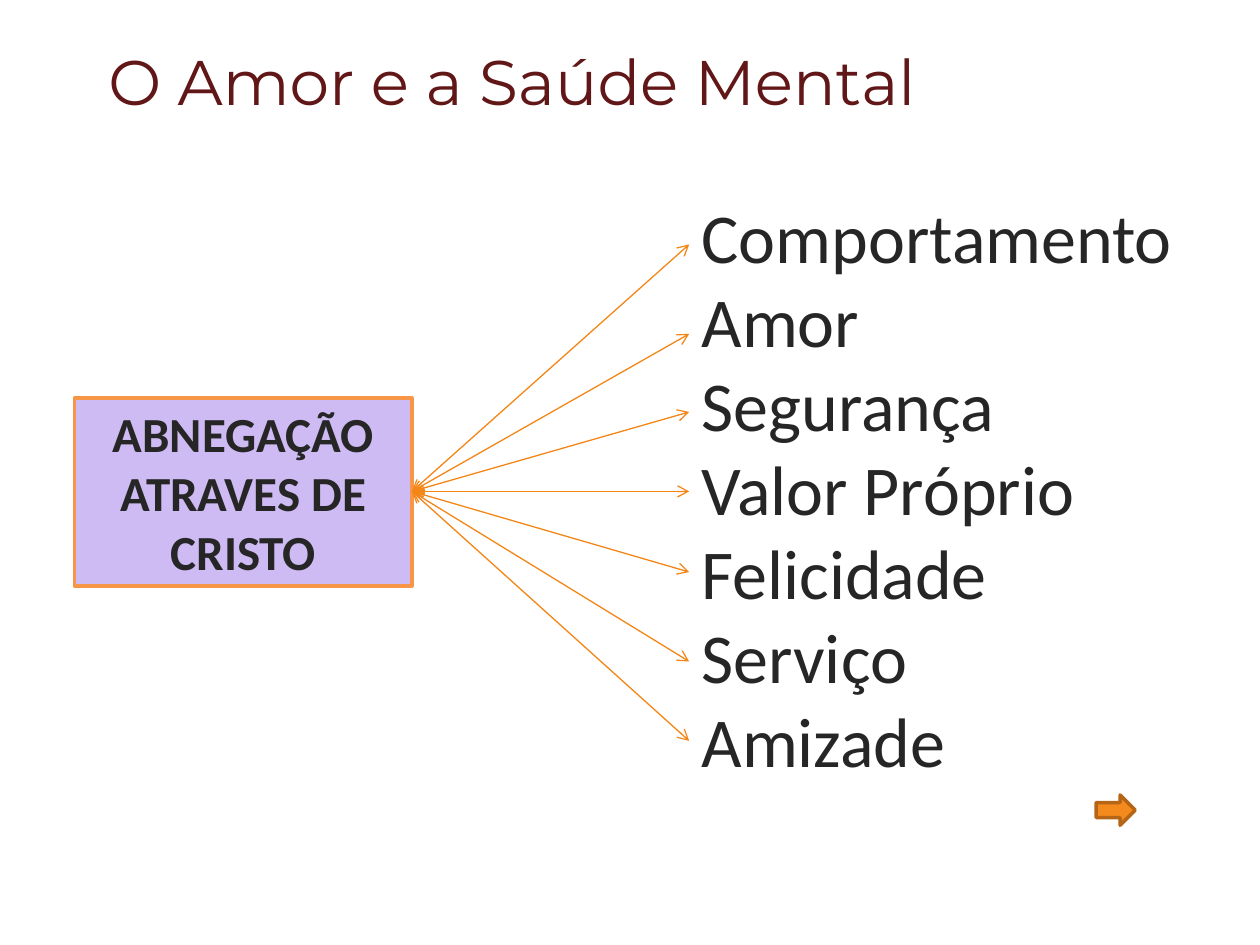
from lxml import etree
from pptx import Presentation
from pptx.dml.color import RGBColor
from pptx.enum.shapes import MSO_CONNECTOR, MSO_SHAPE
from pptx.enum.text import MSO_ANCHOR, PP_ALIGN
from pptx.oxml.ns import qn
from pptx.util import Inches, Pt

STRAIGHT = MSO_CONNECTOR.STRAIGHT
RECTANGLE, RIGHT_ARROW = MSO_SHAPE.RECTANGLE, MSO_SHAPE.RIGHT_ARROW
TOP, MIDDLE = MSO_ANCHOR.TOP, MSO_ANCHOR.MIDDLE
LEFT, CENTER = PP_ALIGN.LEFT, PP_ALIGN.CENTER

COLORS = {
    "title": "611617", "text": "262626", "cause": "CEBBF3", "cause_edge": "F79646",
    "link": "F48618", "next": "F4891E", "next_edge": "B56516",
}
EFFECTS = ["Comportamento", "Amor", "Segurança", "Valor Próprio",
           "Felicidade", "Serviço", "Amizade"]
LINK_ENDS = [1.94, 2.65, 3.27, 3.9, 4.54, 5.25, 5.88]


def color(name):
    """Return the named colour of the palette."""
    return RGBColor.from_string(COLORS[name])


def place(shape, box):
    """Move a shape to a left, top, width, height box in inches."""
    shape.left, shape.top, shape.width, shape.height = map(Inches, box)


def write(shape, lines, font, size, ink, anchor=TOP, align=LEFT, bold=False):
    """Fill a shape with one formatted paragraph per line."""
    frame = shape.text_frame
    frame.word_wrap = True
    frame.vertical_anchor = anchor
    frame.text = "\n".join(lines)
    for para in frame.paragraphs:
        para.alignment = align
        for span in para.runs:
            span.font.name, span.font.size, span.font.bold = font, Pt(size), bold
            span.font.color.rgb = color(ink)


def add_title(page, box):
    """Place the slide title."""
    place(page.shapes.title, box)
    write(page.shapes.title, ["O Amor e a Saúde Mental"], "Montserrat", 36, "title")


def add_block(page, kind, box, fill, edge):
    """Add a filled shape with a two-point outline."""
    block = page.shapes.add_shape(kind, *map(Inches, box))
    block.shadow.inherit = False
    block.fill.solid()
    block.fill.fore_color.rgb = color(fill)
    block.line.color.rgb = color(edge)
    block.line.width = Pt(2)
    return block


def add_cause(page, box):
    """Add the box from which the links fan out."""
    cause = add_block(page, RECTANGLE, box, "cause", "cause_edge")
    write(cause, ["ABNEGAÇÃO ATRAVES DE CRISTO"], "Calibri", 28, "text",
          MIDDLE, CENTER, True)


def add_effects(page, box):
    """Add the list of effects."""
    effects = page.shapes.add_textbox(*map(Inches, box))
    write(effects, EFFECTS, "Calibri", 40, "text")


def add_links(page, start, right):
    """Fan double-headed arrows from the start point to the effects."""
    for end in LINK_ENDS:
        link = page.shapes.add_connector(
            STRAIGHT, *map(Inches, (*start, right, end)))
        link.line.color.rgb = color("link")
        link.line.width = Pt(0.75)
        outline = link.line._get_or_add_ln()
        for tip in ("a:headEnd", "a:tailEnd"):
            etree.SubElement(outline, qn(tip), type="arrow")
        etree.SubElement(link._element.spPr, qn("a:effectLst"))


def main():
    """Build and save the slide."""
    deck = Presentation()
    deck.slide_width, deck.slide_height = Inches(10), Inches(7.5)
    page = deck.slides.add_slide(deck.slide_layouts[5])
    add_title(page, (0.76, 0.29, 8.43, 0.71))
    add_cause(page, (0.59, 3.16, 2.68, 1.49))
    add_effects(page, (5.47, 1.49, 4.17, 4.81))
    add_links(page, (3.27, 3.9), 5.47)
    add_block(page, RIGHT_ARROW, (8.7, 6.31, 0.31, 0.24), "next", "next_edge")
    deck.save("out.pptx")


if __name__ == "__main__":
    main()
